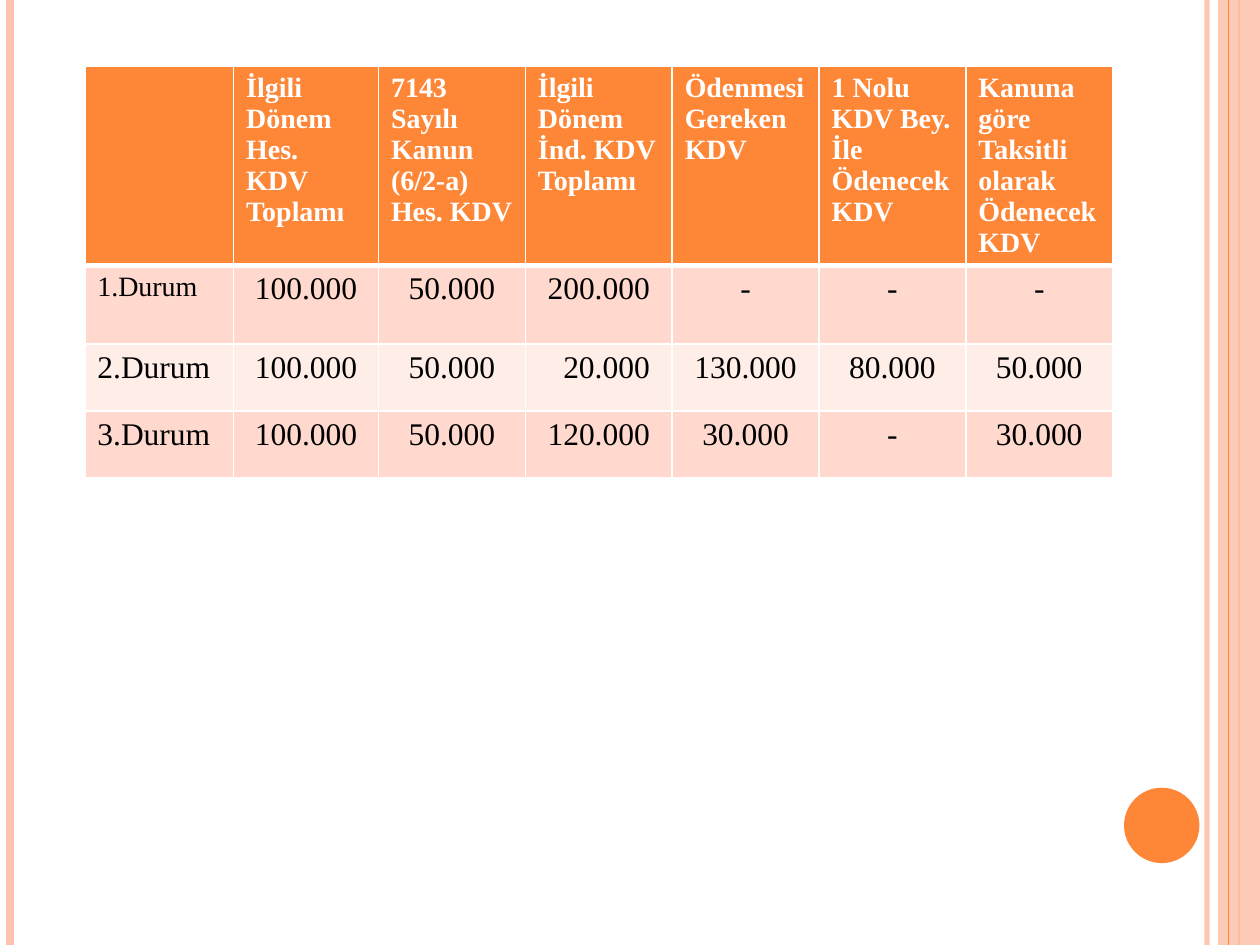
from lxml import etree
from pptx import Presentation
from pptx.dml.color import RGBColor
from pptx.enum.shapes import MSO_CONNECTOR, MSO_SHAPE
from pptx.enum.text import PP_ALIGN
from pptx.oxml.ns import qn
from pptx.util import Cm, Pt

STRAIGHT = MSO_CONNECTOR.STRAIGHT
RECTANGLE, OVAL = MSO_SHAPE.RECTANGLE, MSO_SHAPE.OVAL
LEFT, CENTER = PP_ALIGN.LEFT, PP_ALIGN.CENTER

ORANGE = RGBColor(0xFE, 0x86, 0x37)
PEACH = RGBColor(0xFE, 0xC3, 0xAE)
BAND_DARK = RGBColor(0xFF, 0xD9, 0xCE)
BAND_LIGHT = RGBColor(0xFF, 0xED, 0xE8)
WHITE = RGBColor(0xFF, 0xFF, 0xFF)
BLACK = RGBColor(0, 0, 0)

FONT = "Times New Roman"
SLIDE_WIDTH, SLIDE_HEIGHT = Cm(25.4), Cm(19.05)
COLUMN_WIDTHS = [Cm(3), Cm(2.92)] + [Cm(2.96)] * 5
ROW_HEIGHTS = [Cm(3.99), Cm(1.59), Cm(1.35), Cm(1.35)]
SHIFTED_AMOUNT = (2, 3)

HEADINGS = [
    "",
    "İlgili Dönem Hes. KDV Toplamı",
    "7143 Sayılı Kanun (6/2-a) Hes. KDV",
    "İlgili Dönem İnd. KDV Toplamı",
    "Ödenmesi Gereken KDV",
    "1 Nolu KDV Bey. İle Ödenecek KDV",
    "Kanuna göre Taksitli olarak Ödenecek KDV",
]
CASES = [
    ["1.Durum", "100.000", "50.000", "200.000", "-", "-", "-"],
    ["2.Durum", "100.000", "50.000", "20.000", "130.000", "80.000", "50.000"],
    ["3.Durum", "100.000", "50.000", "120.000", "30.000", "-", "30.000"],
]


def set_opacity(element, percent):
    color = element.find(".//" + qn("a:srgbClr"))
    etree.SubElement(color, qn("a:alpha"), val=str(percent * 1000))


def add_stripe(slide, x, color, width, opacity=100):
    stripe = slide.shapes.add_connector(STRAIGHT, x, 0, x, SLIDE_HEIGHT)
    stripe.line.color.rgb = color
    stripe.line.width = Pt(width)
    properties = stripe._element.spPr
    if opacity < 100:
        set_opacity(properties, opacity)
    etree.SubElement(properties, qn("a:effectLst"))


def add_plain_shape(slide, preset, left, top, width, height, color, opacity=100):
    shape = slide.shapes.add_shape(preset, left, top, width, height)
    shape.shadow.inherit = False
    shape.fill.solid()
    shape.fill.fore_color.rgb = color
    shape.line.fill.background()
    if opacity < 100:
        set_opacity(shape._element.spPr, opacity)


def set_borders(cell, bottom_width, top_width):
    properties = cell._tc.get_or_add_tcPr()
    widths = {"lnL": 1, "lnR": 1, "lnT": top_width, "lnB": bottom_width}
    for position, (side, width) in enumerate(widths.items()):
        border = etree.Element(qn("a:" + side), w=str(Pt(width)))
        fill = etree.SubElement(border, qn("a:solidFill"))
        etree.SubElement(fill, qn("a:srgbClr"), val=str(WHITE))
        properties.insert(position, border)


def fill_cell(cell, text, fill, color, size, bold, alignment):
    cell.fill.solid()
    cell.fill.fore_color.rgb = fill
    cell.text = text
    paragraph = cell.text_frame.paragraphs[0]
    paragraph.alignment = alignment
    font = paragraph.font
    font.name, font.size, font.bold = FONT, Pt(size), bold
    font.color.rgb = color


def add_tax_table(slide):
    table = slide.shapes.add_table(
        len(ROW_HEIGHTS), len(COLUMN_WIDTHS), Cm(1.71), Cm(1.33),
        sum(COLUMN_WIDTHS), sum(ROW_HEIGHTS)).table
    for column, width in zip(table.columns, COLUMN_WIDTHS):
        column.width = width
    for row, height in zip(table.rows, ROW_HEIGHTS):
        row.height = height

    for c, heading in enumerate(HEADINGS):
        cell = table.cell(0, c)
        fill_cell(cell, heading, ORANGE, WHITE, 16, True, LEFT)
        set_borders(cell, bottom_width=3, top_width=1)

    for r, case in enumerate(CASES, start=1):
        band = BAND_DARK if r % 2 else BAND_LIGHT
        for c, value in enumerate(case):
            cell = table.cell(r, c)
            size = 16 if (r, c) == (1, 0) else 18
            fill_cell(cell, value, band, BLACK, size, False, CENTER if c else LEFT)
            set_borders(cell, bottom_width=1, top_width=3 if r == 1 else 1)
    table.cell(*SHIFTED_AMOUNT).margin_left = Cm(0.57)


def add_decoration(slide):
    add_stripe(slide, Cm(24.33), PEACH, 3, opacity=93)
    add_stripe(slide, Cm(0.21), PEACH, 4.5)
    add_stripe(slide, Cm(24.98), ORANGE, 1.5)
    add_plain_shape(slide, RECTANGLE, Cm(24.55), 0, Cm(0.85), SLIDE_HEIGHT,
                    PEACH, opacity=87)
    add_stripe(slide, Cm(24.76), ORANGE, 0.75)
    add_plain_shape(slide, OVAL, Cm(22.66), Cm(15.88), Cm(1.52), Cm(1.52), ORANGE)


def main():
    presentation = Presentation()
    presentation.slide_width = SLIDE_WIDTH
    presentation.slide_height = SLIDE_HEIGHT
    slide = presentation.slides.add_slide(presentation.slide_layouts[6])
    add_decoration(slide)
    add_tax_table(slide)
    presentation.save("out.pptx")


if __name__ == "__main__":
    main()
